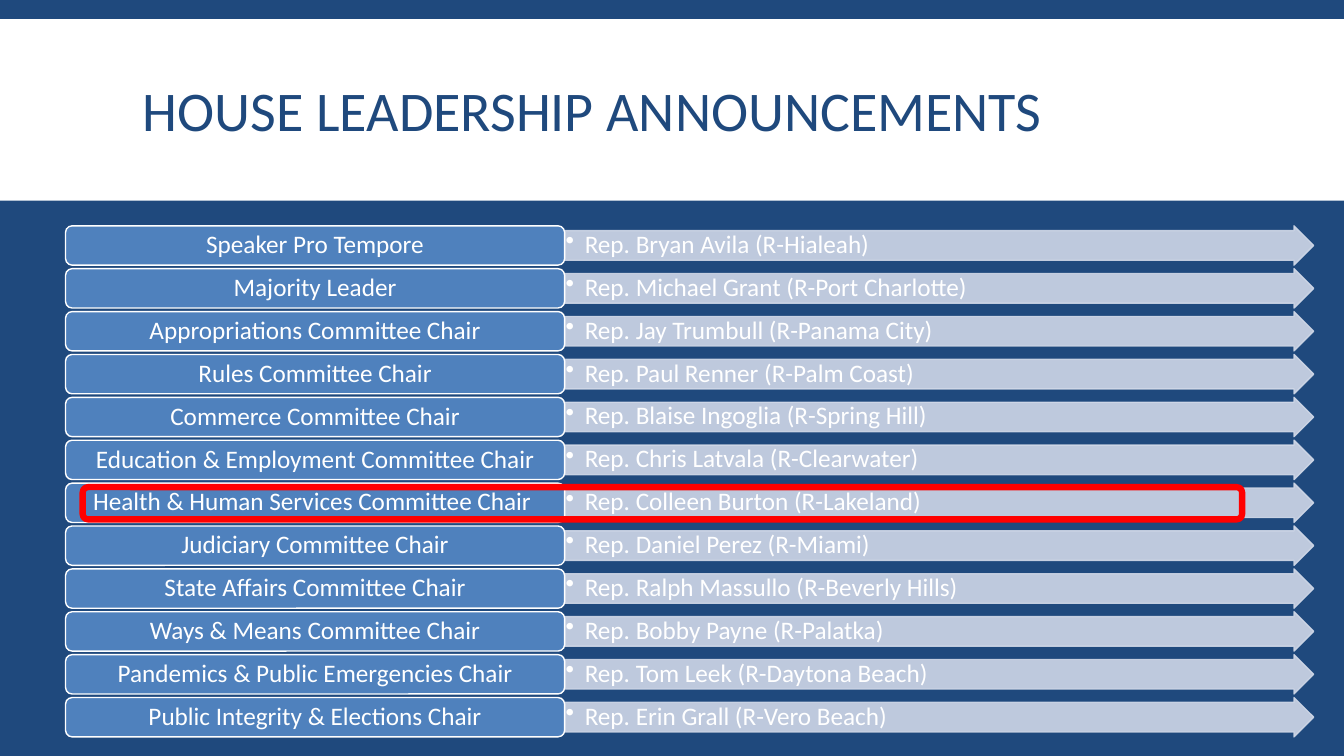
from lxml.etree import SubElement
from pptx import Presentation
from pptx.dml.color import RGBColor
from pptx.enum.shapes import MSO_SHAPE as Shape
from pptx.enum.text import MSO_ANCHOR as Anchor, PP_ALIGN as Align
from pptx.oxml.ns import qn
from pptx.util import Inches, Pt

COLORS = {
    "navy": "1F497D",
    "white": "FFFFFF",
    "role": "4F81BD",
    "arrow": "D0D8E8",
    "highlight": "FF0000",
}
LEADERS = [
    ("Speaker Pro Tempore", "Rep. Bryan Avila (R-Hialeah)"),
    ("Majority Leader", "Rep. Michael Grant (R-Port Charlotte)"),
    ("Appropriations Committee Chair", "Rep. Jay Trumbull (R-Panama City)"),
    ("Rules Committee Chair", "Rep. Paul Renner (R-Palm Coast)"),
    ("Commerce Committee Chair", "Rep. Blaise Ingoglia (R-Spring Hill)"),
    ("Education & Employment Committee Chair", "Rep. Chris Latvala (R-Clearwater)"),
    ("Health & Human Services Committee Chair ", "Rep. Colleen Burton (R-Lakeland)"),
    ("Judiciary Committee Chair", "Rep. Daniel Perez (R-Miami)"),
    ("State Affairs Committee Chair", "Rep. Ralph Massullo (R-Beverly Hills)"),
    ("Ways & Means Committee Chair", "Rep. Bobby Payne (R-Palatka)"),
    ("Pandemics & Public Emergencies Chair", "Rep. Tom Leek (R-Daytona Beach)"),
    ("Public Integrity & Elections Chair", "Rep. Erin Grall (R-Vero Beach)"),
]
HIGHLIGHTED_ROW = 6
ROW_HEIGHT = 0.39
ROLE_WIDTH = 4.95


def color(name):
    return RGBColor.from_string(COLORS[name])


def add_box(page, kind, box, fill=None, line=None, width=1, opacity=None):
    shape = page.shapes.add_shape(kind, *map(Inches, box))
    shape.shadow.inherit = False
    for paint, name in ((shape.fill, fill), (shape.line.fill, line)):
        if name is None:
            paint.background()
            continue
        paint.solid()
        paint.fore_color.rgb = color(name)
    if line:
        shape.line.width = Pt(width)
    if opacity:
        for tint in shape.element.spPr.iter(qn("a:srgbClr")):
            SubElement(tint, qn("a:alpha"), val=str(opacity * 1000))
    return shape


def write(shape, text, size=18, ink="white", align=Align.LEFT, anchor=Anchor.MIDDLE,
          insets=(0.1, 0.05), spacing=0.9, bullet_indent=None):
    frame = shape.text_frame
    frame.word_wrap = True
    frame.vertical_anchor = anchor
    frame.margin_left = frame.margin_right = Inches(insets[0])
    frame.margin_top = frame.margin_bottom = Inches(insets[1])
    para = frame.paragraphs[0]
    para.alignment = align
    para.line_spacing = spacing
    span = para.add_run()
    span.text = text
    span.font.name = "Calibri"
    span.font.size = Pt(size)
    span.font.color.rgb = color(ink)
    if bullet_indent:
        para.level = 1
        props = para._p.get_or_add_pPr()
        props.set("marL", str(Inches(bullet_indent)))
        props.set("indent", str(-Inches(bullet_indent)))
        SubElement(props, qn("a:buChar"), char="•")


def add_header(page, box):
    left, top, width, height = box
    add_box(page, Shape.RECTANGLE, box, fill="white")
    title = page.shapes.add_textbox(
        Inches(left + 1.32), Inches(top + 0.12), Inches(width - 2.63), Inches(height - 0.15))
    write(title, "HOUSE LEADERSHIP ANNOUNCEMENTS", size=40, ink="navy", spacing=0.85)


def add_leader_row(page, box, role, member):
    left, top, width, height = box
    arrow = add_box(page, Shape.RIGHT_ARROW,
                    (left + ROLE_WIDTH, top, width - ROLE_WIDTH, height),
                    fill="arrow", line="arrow", opacity=90)
    arrow.adjustments[0] = 0.75
    write(arrow, member, anchor=Anchor.TOP, insets=(0.01, 0.01), bullet_indent=0.19)
    label = add_box(page, Shape.ROUNDED_RECTANGLE, (left, top, ROLE_WIDTH, height),
                    fill="role", line="white")
    write(label, role, align=Align.CENTER, insets=(0.07, 0.04))


def add_leader_list(page, box):
    left, top, width, height = box
    pitch = (height - ROW_HEIGHT) / (len(LEADERS) - 1)
    for row, (role, member) in enumerate(LEADERS):
        add_leader_row(page, (left, top + row * pitch, width, ROW_HEIGHT), role, member)
    add_box(page, Shape.ROUNDED_RECTANGLE,
            (left + 0.17, top + HIGHLIGHTED_ROW * pitch + 0.04, width - 0.88, 0.32),
            line="highlight", width=4.5)


def main():
    deck = Presentation()
    deck.slide_width, deck.slide_height = Inches(13.33), Inches(7.5)
    page = deck.slides.add_slide(deck.slide_layouts[6])
    page.background.fill.solid()
    page.background.fill.fore_color.rgb = color("navy")
    add_header(page, (0, 0.19, 13.33, 1.8))
    add_leader_list(page, (0.65, 2.24, 12.38, 5.07))
    deck.save("out.pptx")


if __name__ == "__main__":
    main()
